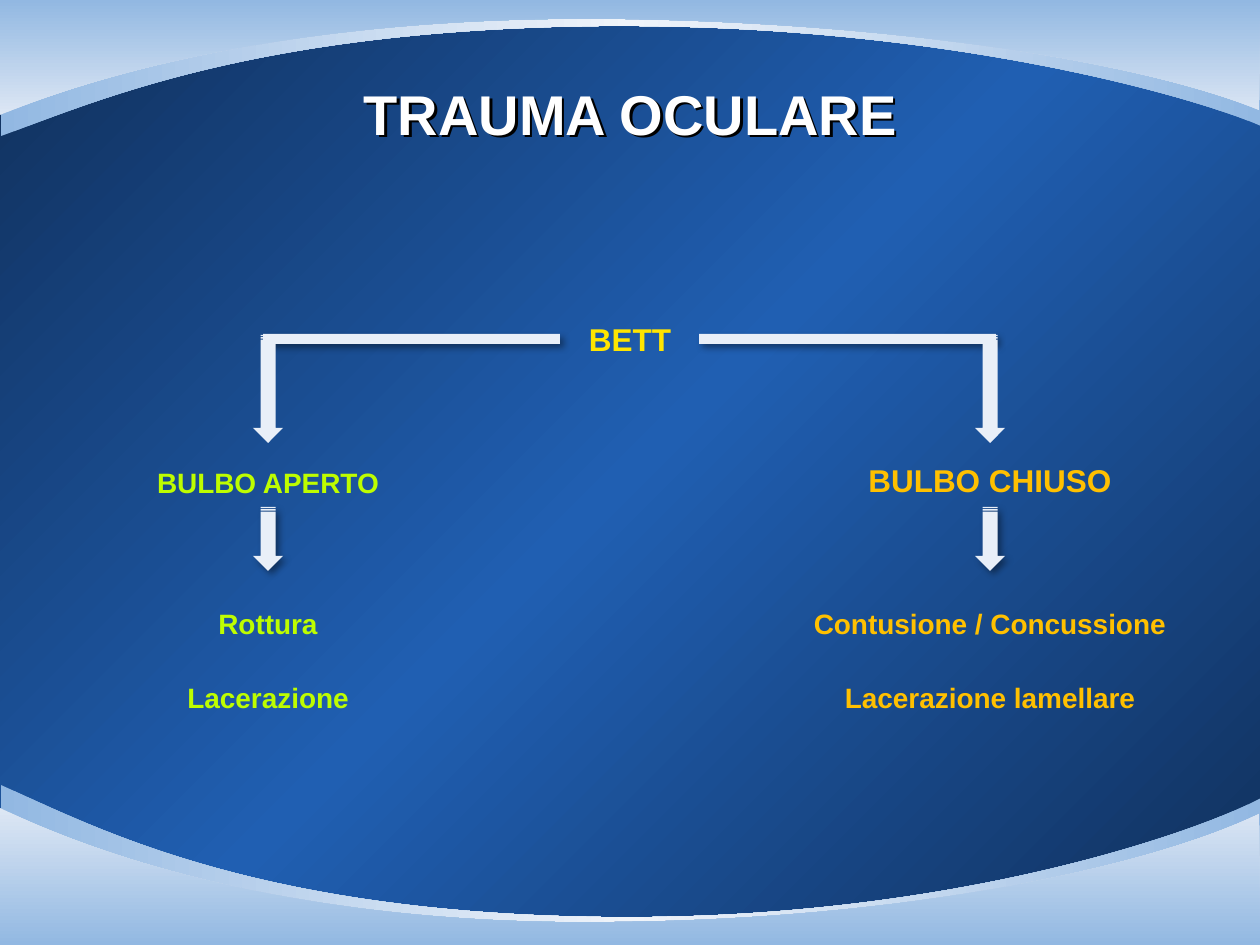
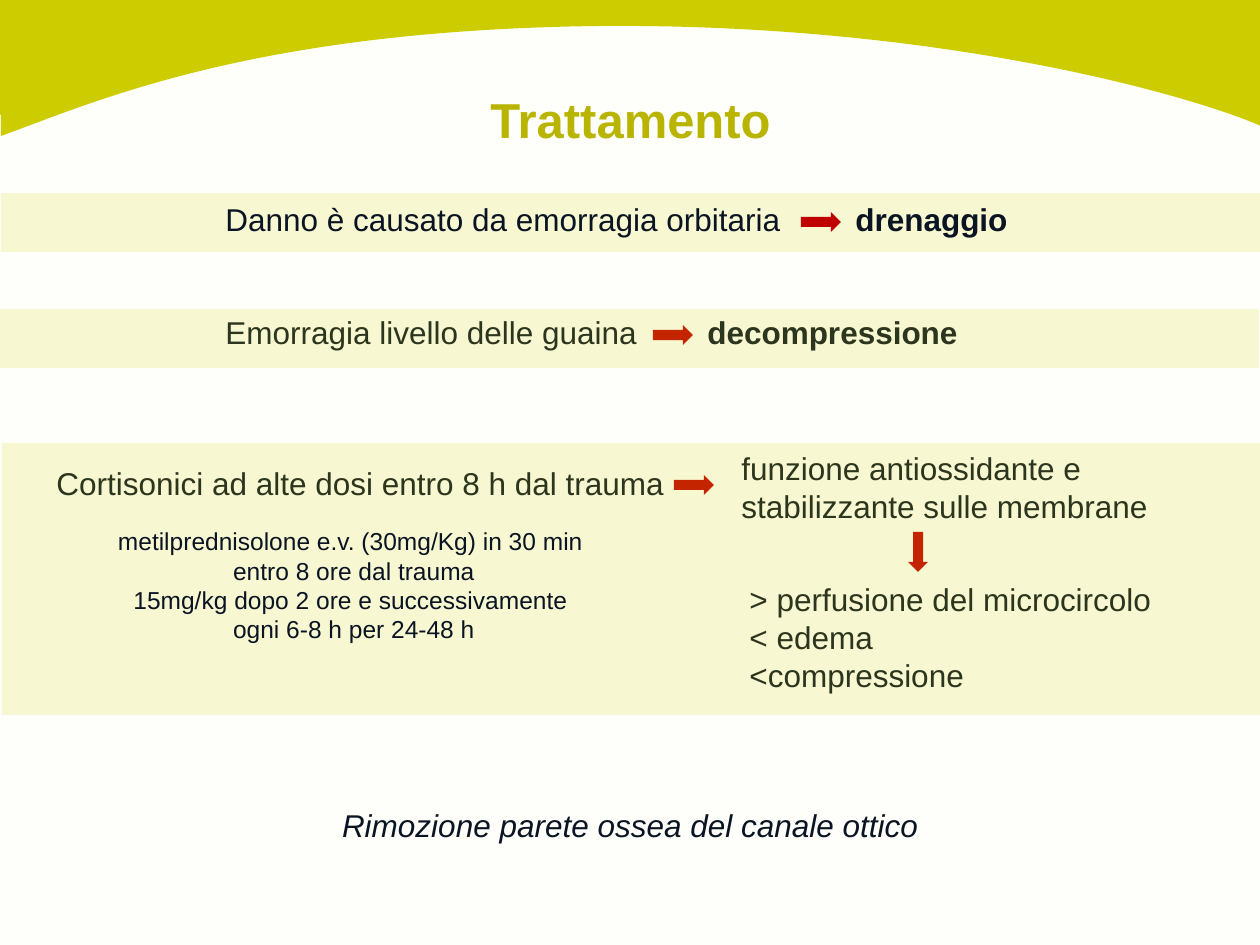
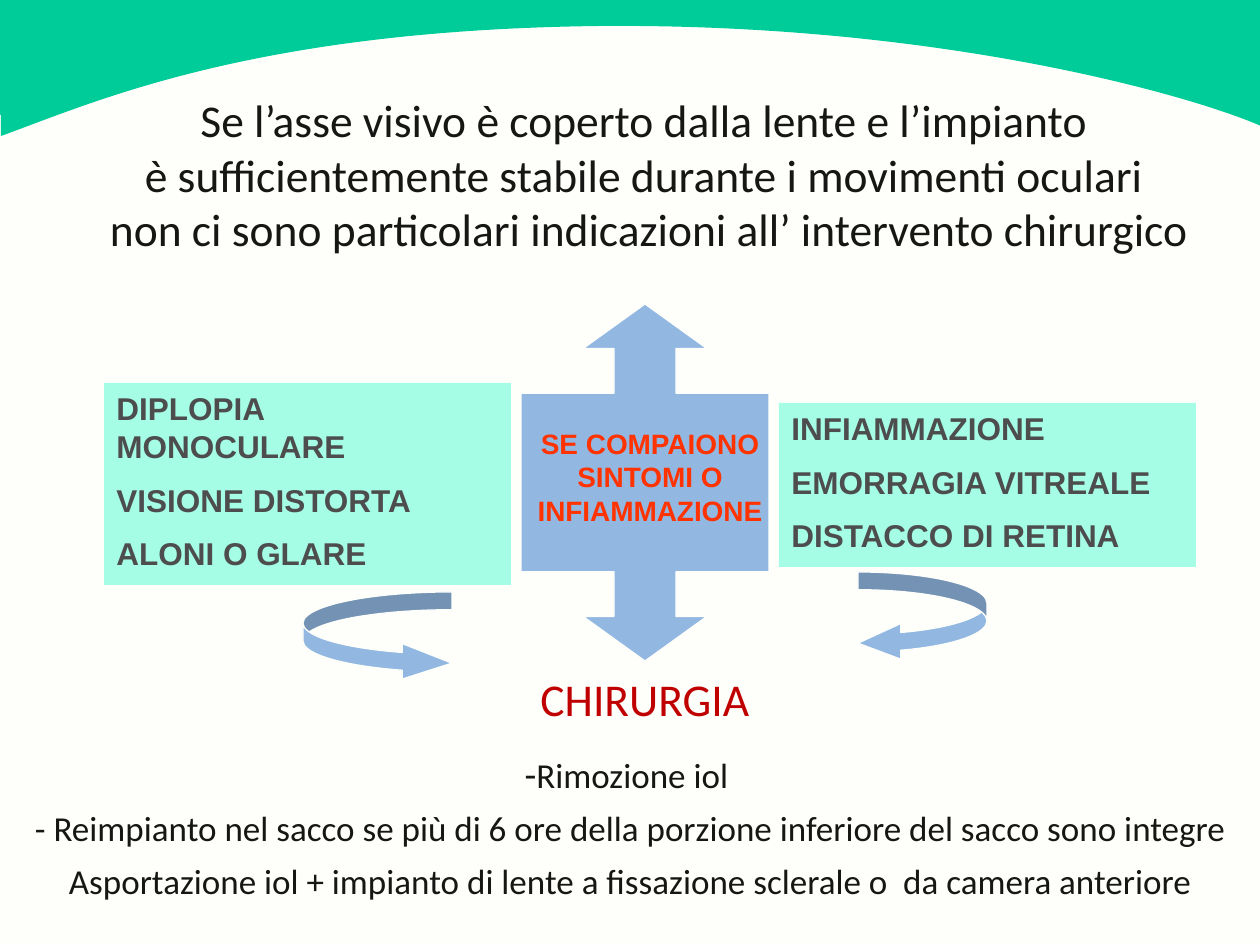
from lxml import etree
from copy import deepcopy
from pptx import Presentation
from pptx import util as u
from pptx.dml.color import RGBColor
from pptx.enum import shapes, text
from pptx.oxml.ns import qn

PX = 914400 / 126
WIDE, HIGH = 1260, 945
COLORS = {
    "navy": "102F5A", "blue": "205FB2", "sky": "92B8E2", "mist": "F0F4FA",
    "haze": "DDE7F4", "ice": "E9EFF8", "white": "FFFFFF", "yellow": "FFE500",
    "lime": "BEFD00", "amber": "FFC000", "paper": "FEFFFB", "olive": "CCCC00",
    "gold": "B8B400", "straw": "D9D905", "ink": "0A1422", "red": "C00000",
    "green": "00CC99", "mint": "A5FDE6", "coal": "161714", "gray": "4D4D4D",
    "flame": "FF3300", "black": "000000",
}
KIND = shapes.MSO_SHAPE
MID = text.PP_ALIGN.CENTER

# Each curve: a start point and two cubic segments, in px
TOP_OUT = [(1, 136), (95, 102), (252, 30), (599, 26), (946, 23), (1198, 98), (1261, 126)]
TOP_IN = [(0, 115), (123, 64), (331, 15), (619, 19), (906, 23), (1148, 64), (1259, 110)]
LOW_OUT = [(1, 785), (95, 827), (252, 912), (599, 917), (946, 922), (1198, 832), (1261, 798)]
LOW_IN = [(0, 808), (123, 868), (330, 927), (619, 922), (905, 919), (1148, 868), (1259, 814)]


def emu(*sizes):
    return [u.Emu(round(size * PX)) for size in sizes]


def rgb(name):
    return RGBColor.from_string(COLORS[name])


def paint(fill, name):
    fill.solid()
    fill.fore_color.rgb = rgb(name)


def blend(fill, names, angle):
    """Even gradient; the angle runs clockwise."""
    fill.gradient()
    fill.gradient_angle = -angle % 360
    first = fill.gradient_stops[0]._gs
    for _ in names[2:]:
        first.addnext(deepcopy(first))
    for i, (stop, name) in enumerate(zip(fill.gradient_stops, names)):
        stop.position = i / (len(names) - 1)
        stop.color.rgb = rgb(name)


def shade(item, blur, dist, alpha):
    item.shadow.inherit = False
    effects = item._element.spPr.find(qn("a:effectLst"))
    shadow = etree.SubElement(
        effects, qn("a:outerShdw"), blurRad=str(u.Pt(blur)),
        dist=str(u.Pt(dist)), dir="2700000", algn="tl", rotWithShape="0")
    color = etree.SubElement(shadow, qn("a:srgbClr"), val=COLORS["black"])
    etree.SubElement(color, qn("a:alpha"), val=str(alpha * 1000))


def shape(slide, kind, box, color, turn=0, adjust=(), edge=None, shadow=False, alpha=None):
    item = slide.shapes.add_shape(kind, *emu(*box))
    item.shadow.inherit = False
    item.rotation = turn
    paint(item.fill, color)
    for i, value in enumerate(adjust):
        item.adjustments[i] = value
    if edge:
        item.line.color.rgb = rgb(edge)
        item.line.width = u.Pt(0.75)
    else:
        item.line.fill.background()
    if shadow:
        shade(item, 4, 3, 40)
    if alpha:
        tint = item._element.spPr.find(qn("a:solidFill"))[0]
        etree.SubElement(tint, qn("a:alpha"), val=str(alpha * 1000))
    return item


def arrow(slide, kind, center, size, color, turn=0, shadow=False):
    (x, y), (wide, high) = center, size
    shape(slide, kind, (x - wide / 2, y - high / 2, wide, high), color, turn, shadow=shadow)


def write(frame, lines, size, color, bold=False, italic=False, font="Arial",
          align=None, after=0):
    """Each line is a string, or a tuple of runs."""
    frame.word_wrap = True
    frame.vertical_anchor = text.MSO_ANCHOR.TOP
    for i, line in enumerate(lines):
        para = frame.add_paragraph() if i else frame.paragraphs[0]
        if isinstance(line, str):
            para.text = line
        else:
            for part in line:
                para.add_run().text = part
        para.alignment = align or text.PP_ALIGN.LEFT
        para.space_after = u.Pt(after)
        for run in para.runs:
            run.font.size = u.Pt(size)
            run.font.name = font
            run.font.bold = bold
            run.font.italic = italic
            run.font.color.rgb = rgb(color)
    return frame.paragraphs


def note(slide, box, lines, size, color, **style):
    item = slide.shapes.add_textbox(*emu(*box))
    write(item.text_frame, lines, size, color, **style)
    return item


def title(slide, top, words, size, color):
    return note(slide, (1, top, 1259, 76), [words], size, color, bold=True, align=MID)


# Curved bands shared by the slides
def wave(slide, points, edge):
    pen = slide.shapes.build_freeform(*points[0], scale=PX)
    pen.add_line_segments(points[1:] + [(WIDE, edge), (points[0][0], edge)], close=True)
    item = pen.convert_to_shape()
    item.shadow.inherit = False
    item.line.fill.background()
    # The first six segments become two cubic curves
    legs = list(item._element.iter(qn("a:lnTo")))
    for k in (0, 3):
        bend = etree.Element(qn("a:cubicBezTo"))
        legs[k].addprevious(bend)
        for leg in legs[k:k + 3]:
            bend.append(leg[0])
            leg.getparent().remove(leg)
    return item.fill


def glow(slide, outer, inner, edges, angle):
    blend(wave(slide, outer, edges[0]), ("sky", "mist", "sky"), 0)
    blend(wave(slide, inner, edges[1]), ("haze", "sky"), angle)


def page(deck):
    return deck.slides.add_slide(deck.slide_layouts[6])


def plain(deck, color):
    slide = page(deck)
    paint(slide.background.fill, "paper")
    paint(wave(slide, TOP_OUT, 4), color)
    paint(wave(slide, TOP_IN, 0), color)
    return slide


# Slide 1: two branches
def branch(slide, x, y, head, drop, size, kinds, color):
    for top, high in ((0, 108), (172, 64)):
        arrow(slide, KIND.STRIPED_RIGHT_ARROW, (x, y + top + high / 2), (high, 30),
              "ice", 90, shadow=top > 0)
    note(slide, (x - 200, y + drop, 400, 50), [head], size, color, bold=True, align=MID)
    for i, kind in enumerate(kinds):
        note(slide, (x - 200, y + 265 + 74 * i, 400, 47), [kind], 16, color,
             bold=True, align=MID)


def trauma(deck):
    slide = page(deck)
    blend(slide.background.fill, ("navy", "blue", "navy"), 45)
    glow(slide, LOW_OUT, LOW_IN, (HIGH, HIGH), 90)
    glow(slide, TOP_OUT, TOP_IN, (4, 0), 270)
    shade(title(slide, 73, "TRAUMA OCULARE", 32, "white"), 0, 2, 100)
    note(slide, (0, 314, WIDE, 50), ["BETT"], 18, "yellow", bold=True, align=MID)
    for x in (263, 699):
        shape(slide, KIND.RECTANGLE, (x, 334, 297, 10), "ice", shadow=True)
    branch(slide, 268, 335, "BULBO APERTO", 124, 16, ("Rottura", "Lacerazione"), "lime")
    branch(slide, 990, 335, "BULBO CHIUSO", 120, 18,
           ("Contusione / Concussione", "Lacerazione lamellare"), "amber")


# Slide 2: causes and cures
def strip(slide, box):
    shape(slide, KIND.RECTANGLE, box, "straw", alpha=17)


def cause(slide, y, words, cure, stop):
    item = note(slide, (213, y, 942, 50), [(words + "\t", cure)], 18, "ink")
    para = item.text_frame.paragraphs[0]
    para.runs[1].font.bold = True
    tabs = etree.SubElement(para._p.get_or_add_pPr(), qn("a:tabLst"))
    etree.SubElement(tabs, qn("a:tab"), pos=str(round(stop * PX)), algn="l")
    arrow(slide, KIND.RIGHT_ARROW, (226 + stop - 35, y + 28), (40, 20), "red")


def steroid(slide, x, y):
    note(slide, (x + 42, y + 15, 824, 50),
         ["Cortisonici ad alte dosi entro 8 h dal trauma"], 18, "ink")
    arrow(slide, KIND.RIGHT_ARROW, (x + 692, y + 42), (40, 20), "red")
    note(slide, (x + 727, y, 529, 89),
         ["funzione antiossidante e \vstabilizzante sulle membrane"], 18, "ink")
    arrow(slide, KIND.RIGHT_ARROW, (x + 916, y + 109), (40, 20), "red", 90)
    note(slide, (x + 735, y + 131, 437, 127),
         ["> perfusione del microcircolo", "< edema", "<compressione"], 18, "ink")
    strip(slide, (x, y, 1259, 272))
    note(slide, (x + 37, y + 77, 630, 131),
         ["metilprednisolone e.v. (30mg/Kg) in 30 min \ventro 8 ore dal trauma",
          "15mg/kg dopo 2 ore e successivamente \vogni 6-8 h per 24-48 h"],
         14, "ink", align=MID)


def cures(deck):
    slide = plain(deck, "olive")
    title(slide, 83, "Trattamento", 28, "gold")
    strip(slide, (1, 193, 1259, 59))
    cause(slide, 194, "Danno è causato da emorragia orbitaria", "drenaggio", 630)
    cause(slide, 307, "Emorragia livello delle guaina", "decompressione", 482)
    strip(slide, (0, 309, 1259, 59))
    steroid(slide, 2, 443)
    note(slide, (5, 800, 1259, 50), ["Rimozione parete ossea del canale ottico "],
         18, "ink", italic=True, align=MID)


# Slide 3: when to operate
def panel(slide, box, lines):
    frame = shape(slide, KIND.RECTANGLE, box, "mint").text_frame
    write(frame, lines, 18, "gray", bold=True, after=9)


def choice(slide, x, y):
    shape(slide, KIND.UP_DOWN_ARROW_CALLOUT, (x, y, 248, 357), "sky",
          adjust=(0.25, 0.25, 0.18, 0.5), edge="paper")
    note(slide, (x, y + 116, 258, 113), ["SE COMPAIONO SINTOMI O INFIAMMAZIONE"],
         16, "flame", bold=True, align=MID)
    panel(slide, (x - 417, y + 79, 407, 202),
          ("DIPLOPIA MONOCULARE", "VISIONE DISTORTA", "ALONI O GLARE"))
    panel(slide, (x + 258, y + 99, 417, 164),
          ("INFIAMMAZIONE", "EMORRAGIA VITREALE", "DISTACCO DI RETINA"))
    shape(slide, KIND.CURVED_RIGHT_ARROW, (x - 218, y + 288, 149, 89), "sky",
          adjust=(0.2, 0.4, 0.56), edge="paper")
    shape(slide, KIND.CURVED_LEFT_ARROW, (x + 337, y + 268, 129, 89), "sky",
          adjust=(0.2, 0.4, 0.48), edge="paper")
    note(slide, (x + 7, y + 361, 236, 68), ["CHIRURGIA"], 26, "red", font="Calibri")


def surgery(deck):
    slide = plain(deck, "green")
    note(slide, (54, 86, 1191, 178),
         ["Se l’asse visivo è coperto dalla lente e l’impianto \v"
          "è sufficientemente stabile durante i movimenti oculari \v"
          "non ci sono particolari indicazioni all’ intervento chirurgico"],
         26, "coal", font="Calibri", align=MID)
    steps = note(
        slide, (1, 744, 1259, 165),
        [("-", "Rimozione iol "),
         "- Reimpianto nel sacco se più di 6 ore della porzione inferiore del sacco sono integre",
         "Asportazione iol + impianto di lente a fissazione sclerale o  da camera anteriore"],
        20, "coal", font="Calibri", align=MID, after=6)
    steps.text_frame.paragraphs[0].runs[0].font.size = u.Pt(22)
    choice(slide, 521, 304)


def main():
    deck = Presentation()
    deck.slide_width, deck.slide_height = emu(WIDE, HIGH)
    trauma(deck)
    cures(deck)
    surgery(deck)
    deck.save("out.pptx")


if __name__ == "__main__":
    main()
